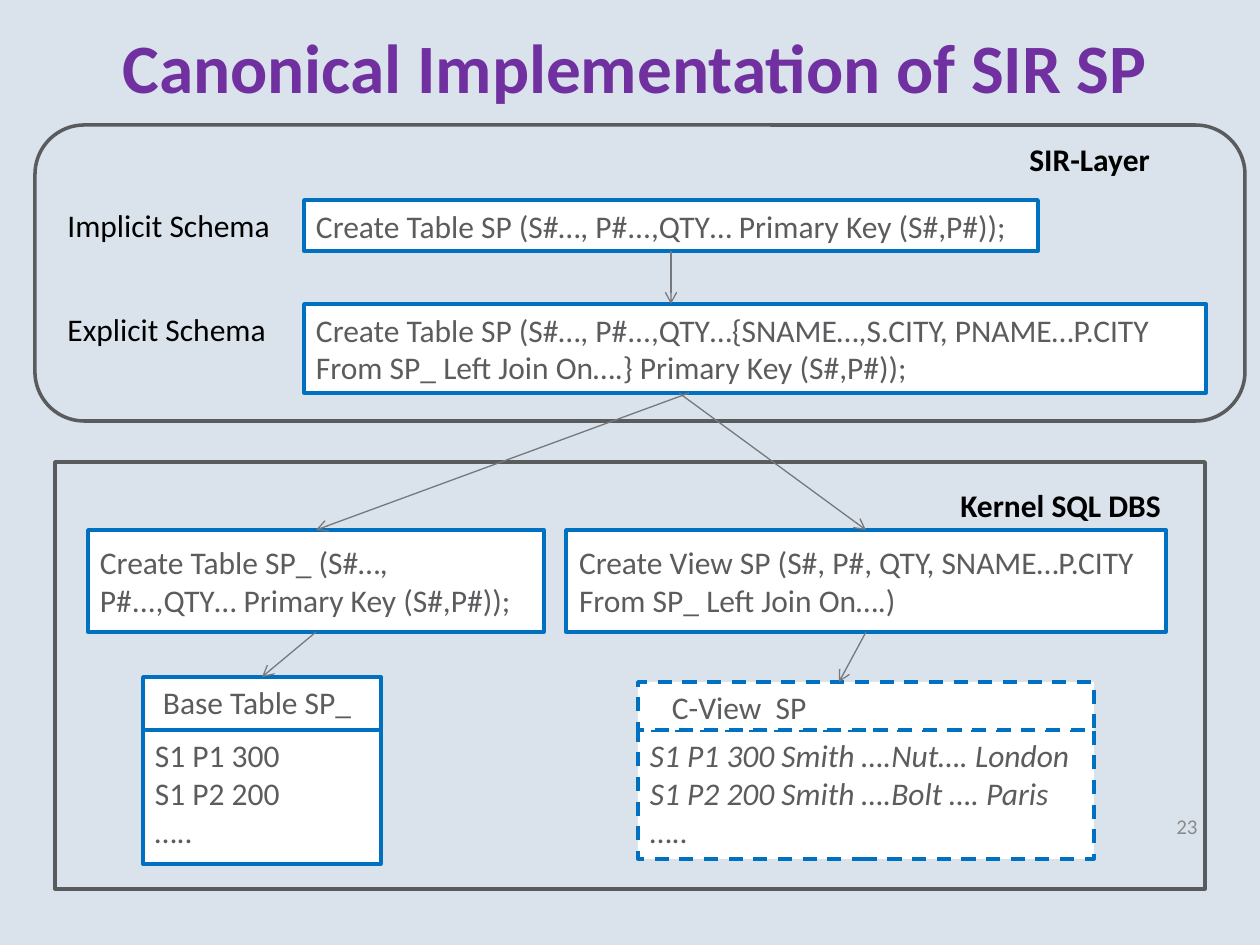
from pptx import Presentation
from pptx.dml.color import RGBColor
from pptx.enum.dml import MSO_LINE
from pptx.enum.shapes import MSO_CONNECTOR, MSO_SHAPE
from pptx.enum.text import MSO_ANCHOR, PP_ALIGN
from pptx.oxml.ns import qn
from pptx.util import Emu, Pt
from lxml.etree import SubElement

BLUE, GREY, TEXT, ARROW = "0070C0", "5A5B5D", "5B5C5E", "76787B"


def px(*values):
    return [Emu(round(v * 914400 / 126)) for v in values]


def write(s, lines, color, size=18, bold=False, align=PP_ALIGN.LEFT,
          anchor=MSO_ANCHOR.TOP):
    tf = s.text_frame
    tf.word_wrap = True
    tf.vertical_anchor = anchor
    tf.text = "\n".join(lines)
    for p in tf.paragraphs:
        p.alignment = align
        p.font.name = "Calibri"
        p.font.size = Pt(size)
        p.font.bold = bold
        p.font.color.rgb = RGBColor.from_string(color)
    return tf


prs = Presentation()
prs.slide_width, prs.slide_height = px(1260, 945)
slide = prs.slides.add_slide(prs.slide_layouts[5])
slide.background.fill.solid()
slide.background.fill.fore_color.rgb = RGBColor.from_string("DAE2EB")

# Title
title = slide.shapes.title
title.left, title.top, title.width, title.height = px(64, 7, 1142, 118)
write(title, ["Canonical Implementation of SIR SP"], "7030A0", 39.6, True,
      PP_ALIGN.CENTER, MSO_ANCHOR.MIDDLE)

# Layer frames
for kind, at in [(MSO_SHAPE.ROUNDED_RECTANGLE, (35, 125, 1210, 296)),
                 (MSO_SHAPE.RECTANGLE, (55, 462, 1150, 427))]:
    s = slide.shapes.add_shape(kind, *px(*at))
    s.shadow.inherit = False
    s.fill.background()
    s.line.color.rgb = RGBColor.from_string(GREY)
    s.line.width = Pt(2)

# Labels
for text, at, bold in [
    ("Implicit Schema", (55, 200, 248, 50), False),
    ("Explicit Schema", (55, 304, 248, 50), False),
    ("SIR-Layer", (1017, 134, 189, 50), True),
    ("Kernel SQL DBS", (948, 480, 238, 50), True),
]:
    write(slide.shapes.add_textbox(*px(*at)), [text], "000000", bold=bold)

# Slide number
write(slide.shapes.add_textbox(*px(916, 801, 294, 50)), ["23"], "8C8C8C", 12,
      align=PP_ALIGN.RIGHT, anchor=MSO_ANCHOR.MIDDLE)

# Statement and table boxes: key, place, lines, anchor, left inset, dashed
MID, TOP = MSO_ANCHOR.MIDDLE, MSO_ANCHOR.TOP
boxes = {}
for key, at, lines, anchor, inset, dashed in [
    ("implicit", (304, 200, 734, 51),
     ["Create Table SP (S#…, P#...,QTY… Primary Key (S#,P#));"], MID, 12, False),
    ("explicit", (304, 304, 902, 89),
     ["Create Table SP (S#…, P#...,QTY…{SNAME…,S.CITY, PNAME…P.CITY "
      "From SP_ Left Join On….} Primary Key (S#,P#));"], MID, 12, False),
    ("base rows", (143, 730, 238, 134),
     ["S1 P1 300", "S1 P2 200", "….."], TOP, 12, False),
    ("view rows", (638, 730, 456, 129),
     ["S1 P1 300 Smith ….Nut…. London", "S1 P2 200 Smith ….Bolt …. Paris",
      "….."], TOP, 12, True),
    ("create table", (88, 530, 456, 102),
     ["Create Table SP_ (S#…, P#...,QTY… Primary Key (S#,P#));"], MID, 12, False),
    ("create view", (566, 530, 600, 102),
     ["Create View SP (S#, P#, QTY, SNAME…P.CITY From SP_ Left Join On….)"],
     MID, 13, False),
    ("base head", (143, 677, 238, 53), ["Base Table SP_"], TOP, 20, False),
    ("view head", (638, 682, 456, 48), ["C-View  SP"], TOP, 34, True),
]:
    s = slide.shapes.add_shape(MSO_SHAPE.RECTANGLE, *px(*at))
    s.shadow.inherit = False
    s.fill.solid()
    s.fill.fore_color.rgb = RGBColor.from_string("FFFFFF")
    s.line.color.rgb = RGBColor.from_string(BLUE)
    s.line.width = Pt(2)
    if dashed:
        s.line.dash_style = MSO_LINE.DASH
    tf = write(s, lines, TEXT, anchor=anchor)
    tf.margin_left = px(inset)[0]
    boxes[key] = s

for p in boxes["view rows"].text_frame.paragraphs[:2]:
    p.font.italic = True

# Arrows: ends, then the boxes joined at a bottom (2) or top (0) middle
for ends, start, end in [
    ((671, 251, 671, 304), "implicit", None),
    ((689, 393, 316, 530), None, "create table"),
    ((679, 393, 866, 530), None, "create view"),
    ((316, 632, 262, 677), "create table", "base head"),
    ((866, 632, 839, 682), "create view", None),
]:
    c = slide.shapes.add_connector(MSO_CONNECTOR.STRAIGHT, *px(*ends))
    if start:
        c.begin_connect(boxes[start], 2)
    if end:
        c.end_connect(boxes[end], 0)
    c.line.color.rgb = RGBColor.from_string(ARROW)
    c.line.width = Pt(0.75)
    SubElement(c.line._get_or_add_ln(), qn("a:tailEnd"), type="arrow")
    SubElement(c._element.spPr, qn("a:effectLst"))

prs.save("out.pptx")
